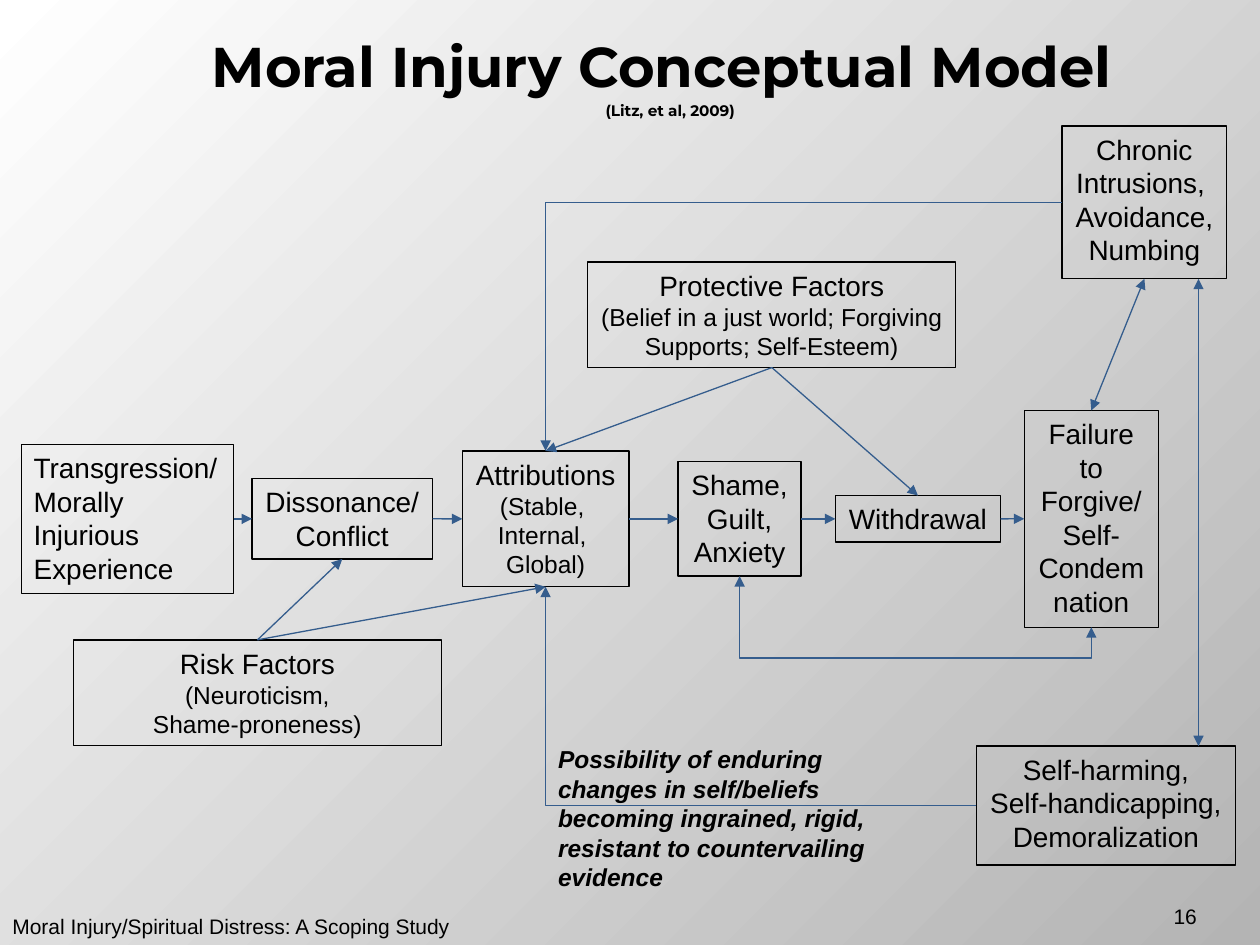
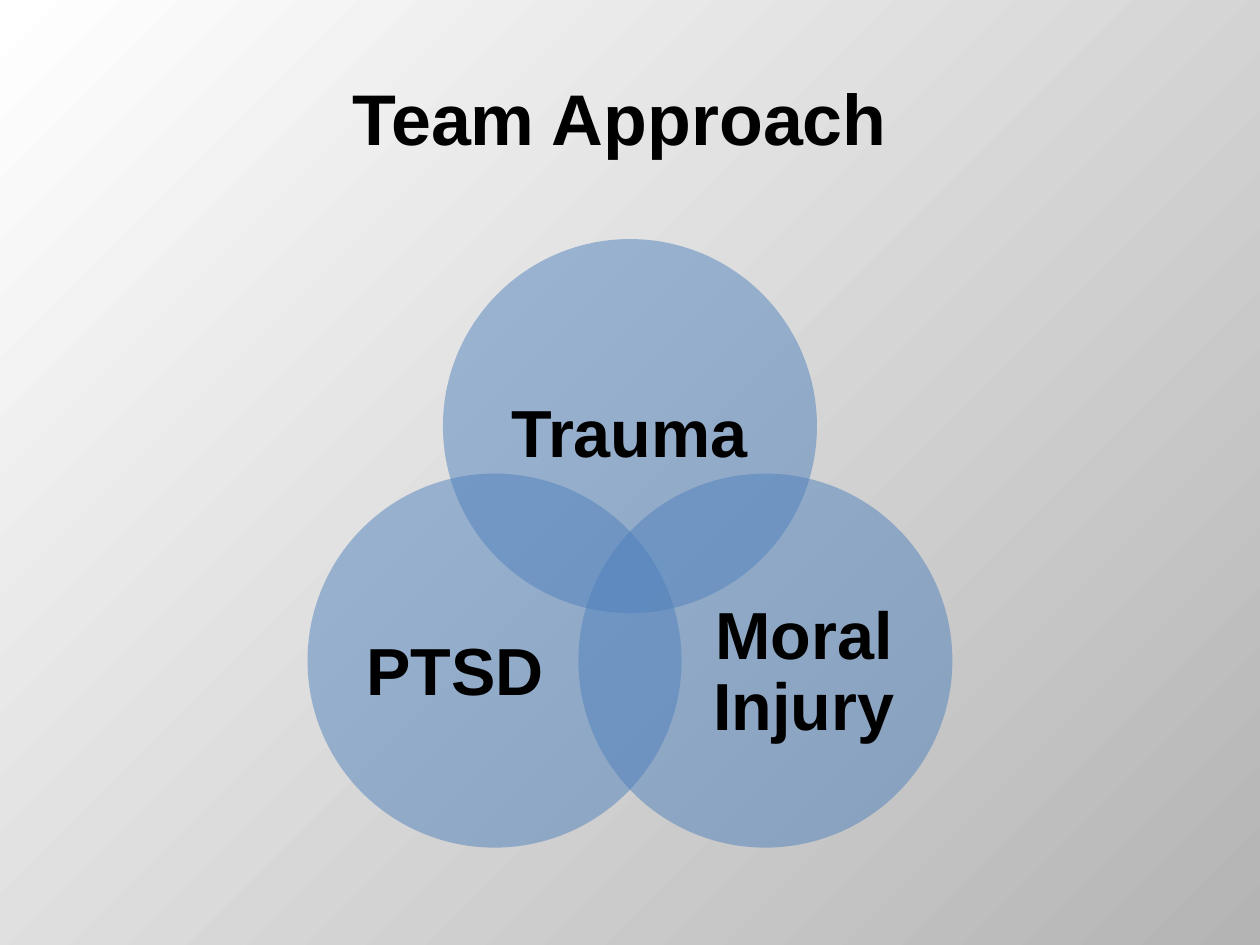
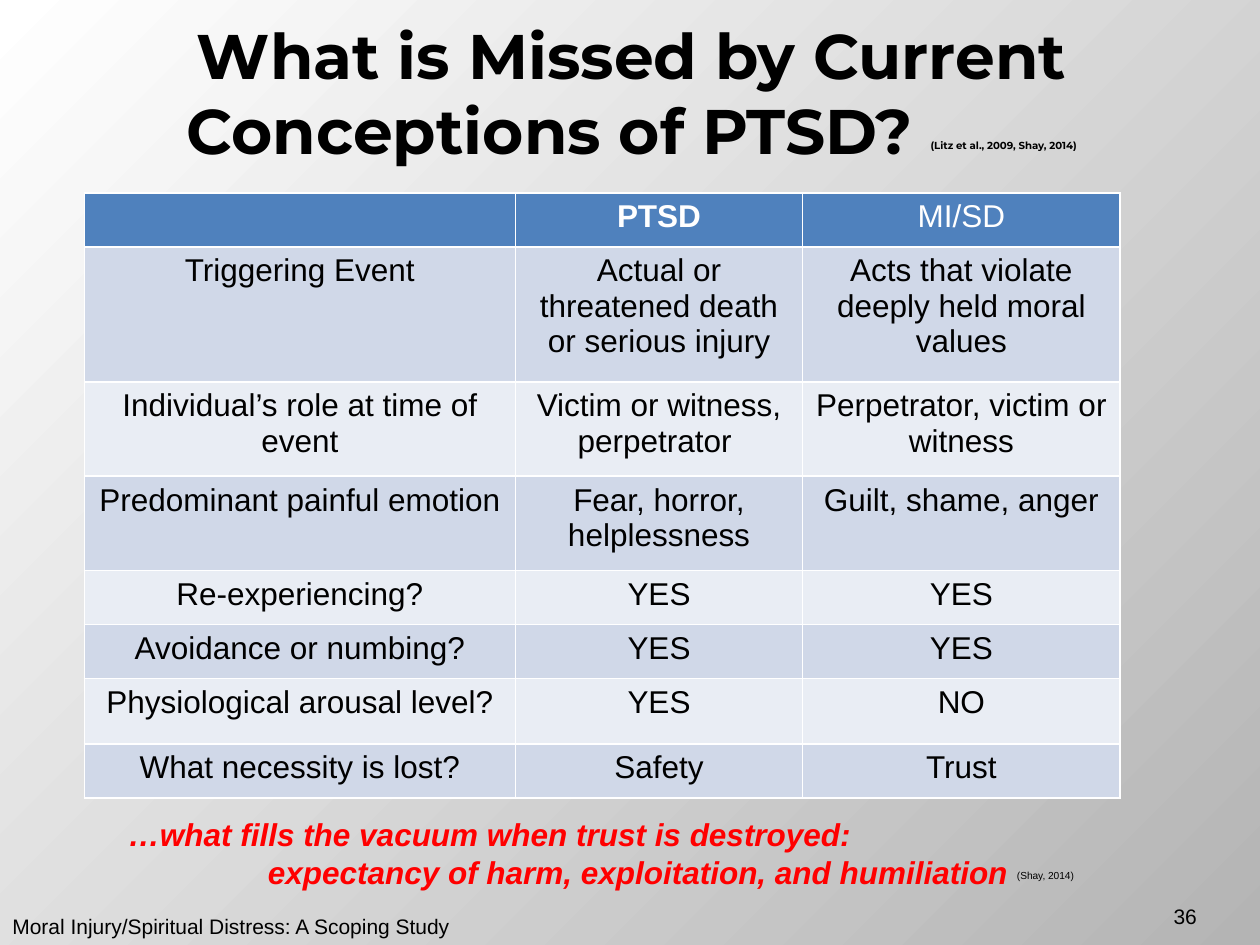
from copy import deepcopy
from math import cos, radians, sin

from lxml.etree import SubElement
from pptx import Presentation
from pptx.dml.color import RGBColor
from pptx.enum.shapes import MSO_CONNECTOR, MSO_SHAPE
from pptx.enum.text import MSO_ANCHOR, MSO_AUTO_SIZE, PP_ALIGN
from pptx.oxml import parse_xml
from pptx.oxml.ns import nsdecls, qn
from pptx.util import Cm, Pt

BLACK = RGBColor(0x00, 0x00, 0x00)
WHITE = RGBColor(0xFF, 0xFF, 0xFF)
RED = RGBColor(0xFF, 0x00, 0x00)
BLUE = RGBColor(0x4F, 0x81, 0xBD)
ARROW = RGBColor(0x35, 0x5D, 0x8D)
BAND_DARK = RGBColor(0xD0, 0xD8, 0xE8)
BAND_LIGHT = RGBColor(0xE9, 0xED, 0xF4)
BACKDROP_END = RGBColor(0xB4, 0xB4, 0xB4)

BODY = {"name": "Arial", "size": Pt(16), "color": BLACK}
HEADING = {"name": "Montserrat", "color": BLACK, "bold": True}
DETAIL = {"size": Pt(14)}
TOP, LEFT, BOTTOM, RIGHT = range(4)

FOOTER = "Moral Injury/Spiritual Distress: A Scoping Study"

ROW_NODES = {
    "event": (0, 4.28, 3, ["Transgression/Morally Injurious Experience"]),
    "conflict": (4.65, 3.64, 1.62, ["Dissonance/\nConflict"]),
    "attributions": (8.89, 3.36, 2.74, [
        "Attributions", [("(Stable, ", DETAIL)], [("Internal, ", DETAIL)], [("Global)", DETAIL)]]),
    "shame": (13.24, 2.48, 2.31, ["Shame,", "Guilt,", "Anxiety"]),
    "withdrawal": (16.41, 3.33, 0.94, ["Withdrawal"]),
    "failure": (20.22, 2.7, 4.37, ["Failure to Forgive/", "Self-Condemnation"]),
}
OUTER_NODES = {
    "protective": (11.42, 2.74, 7.42, 2.13, [
        "Protective Factors",
        [("(Belief in a just world; Forgiving Supports; Self-Esteem)", DETAIL)]]),
    "chronic": (20.98, 0, 3.32, 3.08, ["Chronic", "Intrusions, ", "Avoidance,", "Numbing"]),
    "harm": (19.25, 12.5, 5.23, 2.4, ["Self-harming,", "Self-handicapping,", "Demoralization"]),
    "risk": (1.05, 10.36, 7.42, 2.13, [
        "Risk Factors", [("(Neuroticism,", DETAIL)], [("Shame-proneness)", DETAIL)]]),
}
WRAPPED = {"event", "failure", "protective", "risk"}
FACTOR_LINKS = [
    ("risk", TOP, "conflict", BOTTOM),
    ("risk", TOP, "attributions", BOTTOM),
    ("protective", BOTTOM, "attributions", TOP),
    ("protective", BOTTOM, "withdrawal", TOP),
]
FEEDBACK_LINKS = [
    ("harm", LEFT, "attributions", BOTTOM),
    ("chronic", LEFT, "attributions", TOP),
]

CIRCLES = [
    ("Trauma", -90, (0.99, 1.3, 5.54, 3.4), MSO_ANCHOR.BOTTOM),
    ("Moral Injury", 30, (2.29, 1.96, 4.52, 4.14), MSO_ANCHOR.MIDDLE),
    ("PTSD", 150, (0.71, 1.96, 4.52, 4.14), MSO_ANCHOR.MIDDLE),
]

COMPARISON = [
    ("", "PTSD", "MI/SD"),
    ("Triggering Event", "Actual or threatened death or serious injury",
     "Acts that violate deeply held moral values"),
    ("Individual’s role at time of event", "Victim or witness, perpetrator ",
     "Perpetrator, victim or witness"),
    ("Predominant painful emotion ", "Fear, horror, helplessness", "Guilt, shame, anger"),
    ("Re-experiencing?", "YES", "YES"),
    ("Avoidance or numbing?", "YES", "YES"),
    ("Physiological arousal level?", "YES", "NO"),
    ("What necessity is lost?", "Safety", "Trust"),
]
COLUMN_WIDTHS = (8.69, 5.79, 6.4)
ROW_HEIGHTS = (1.09, 2.72, 1.9, 1.9, 1.09, 1.09, 1.32, 1.09)


def format_run(r, fmt):
    """Apply a dict of format values to a run."""
    for key, value in fmt.items():
        if key == "color":
            r.font.color.rgb = value
        elif key == "baseline":
            r._r.get_or_add_rPr().set("baseline", str(value))
        else:
            setattr(r.font, key, value)


def write(tf, paragraphs, fmt, align=PP_ALIGN.LEFT, spacing=None):
    """Fill a text frame with paragraphs given as strings or as lists of runs."""
    for i, runs in enumerate(paragraphs):
        p = tf.add_paragraph() if i else tf.paragraphs[0]
        p.alignment = align
        p.line_spacing = spacing
        for text, extra in [(runs, {})] if isinstance(runs, str) else runs:
            for j, part in enumerate(text.split("\n")):
                if j:
                    p.add_line_break()
                    p._p[-1].insert(0, deepcopy(r._r.rPr))
                if part:
                    r = p.add_run()
                    r.text = part
                    format_run(r, {**fmt, **extra})


def set_frame(tf, anchor=MSO_ANCHOR.TOP, wrap=True, **margins):
    """Set how a text frame wraps, anchors and pads its text."""
    settings = {"word_wrap": wrap, "auto_size": MSO_AUTO_SIZE.NONE, "vertical_anchor": anchor}
    for key, value in {**settings, **margins}.items():
        setattr(tf, key, value)
    return tf


def add_text(shapes, box, paragraphs, fmt, align=PP_ALIGN.LEFT, spacing=None, **frame):
    """Add a text box."""
    sp = shapes.add_textbox(*map(Cm, box))
    write(set_frame(sp.text_frame, **frame), paragraphs, fmt, align, spacing)
    return sp


def add_title(s, box, runs, fmt, anchor=MSO_ANCHOR.MIDDLE):
    """Move and fill the title placeholder."""
    sp = s.shapes.title
    sp.left, sp.top, sp.width, sp.height = map(Cm, box)
    write(set_frame(sp.text_frame, anchor), [runs], fmt, PP_ALIGN.CENTER)


def add_footer(s, number):
    """Add the study name and the page number."""
    fmt = {**BODY, "size": Pt(12)}
    add_text(s.shapes, (0, 18.03, 9.96, 1.02), [FOOTER], fmt, anchor=MSO_ANCHOR.BOTTOM)
    add_text(s.shapes, (22.02, 17.83, 2.11, 1.02), [str(number)], fmt, PP_ALIGN.RIGHT,
             anchor=MSO_ANCHOR.BOTTOM, margin_left=0, margin_right=0)


def add_node(s, box, paragraphs, wrap, align):
    """Add an outlined box of the diagram."""
    sp = s.shapes.add_shape(MSO_SHAPE.RECTANGLE, *map(Cm, box))
    sp.shadow.inherit = False
    sp.fill.background()
    sp.line.color.rgb = BLACK
    sp.line.width = Pt(0.75)
    write(set_frame(sp.text_frame, wrap=wrap), paragraphs, BODY, align)
    return sp


def add_arrow(s, kind=MSO_CONNECTOR.STRAIGHT, ends=(0, 0, 0, 0), both=False):
    """Add a connector with one or two arrowheads."""
    c = s.shapes.add_connector(kind, *ends)
    c.line.color.rgb = ARROW
    c.line.width = Pt(0.75)
    spPr = c._element.spPr
    for tag in ("a:headEnd", "a:tailEnd") if both else ("a:tailEnd",):
        SubElement(spPr.find(qn("a:ln")), qn(tag)).set("type", "triangle")
    SubElement(spPr, qn("a:effectLst"))
    return c


def link(s, start, start_side, end, end_side, **options):
    """Join the sides of two boxes with an arrow."""
    c = add_arrow(s, **options)
    c.begin_connect(start, start_side)
    c.end_connect(end, end_side)
    return c


def link_below(s, start, end, depth):
    """Join the bottoms of two boxes with an arrow that dips below both."""
    c = link(s, start, BOTTOM, end, BOTTOM, kind=MSO_CONNECTOR.ELBOW, both=True)
    dx, dy = c.width, c.height
    c.left, c.top = c.left + (dx - dy) // 2, c.top + (dy - dx) // 2
    c.width, c.height = dy, dx
    spPr = c._element.spPr
    for key, value in {"rot": "16200000", "flipH": "1"}.items():
        spPr.find(qn("a:xfrm")).set(key, value)
    geom = spPr.find(qn("a:prstGeom"))
    guides = geom.find(qn("a:avLst"))
    if guides is None:
        guides = SubElement(geom, qn("a:avLst"))
    guide = SubElement(guides, qn("a:gd"))
    guide.set("name", "adj1")
    guide.set("fmla", f"val {round(depth / dy * 100000)}")


def add_model(s, left, top):
    """Draw the conceptual model from its top-left corner."""
    axis = 7.92
    boxes = {name: (x, axis - h / 2, w, h, text) for name, (x, w, h, text) in ROW_NODES.items()}
    nodes = {}
    for name, (x, y, w, h, text) in {**boxes, **OUTER_NODES}.items():
        align = PP_ALIGN.LEFT if name == "event" else PP_ALIGN.CENTER
        nodes[name] = add_node(s, (left + x, top + y, w, h), text, name in WRAPPED, align)
    row = list(ROW_NODES)
    steps = [(a, RIGHT, b, LEFT) for a, b in zip(row, row[1:])]
    for a, a_side, b, b_side in steps + FACTOR_LINKS:
        link(s, nodes[a], a_side, nodes[b], b_side)
    for a, a_side, b, b_side in FEEDBACK_LINKS:
        c = link(s, nodes[a], a_side, nodes[b], b_side, kind=MSO_CONNECTOR.ELBOW)
        c._element.spPr.find(qn("a:prstGeom")).set("prst", "bentConnector2")
    chronic, harm = nodes["chronic"], nodes["harm"]
    link(s, chronic, BOTTOM, nodes["failure"], TOP, both=True)
    link_below(s, nodes["shame"], nodes["failure"], Cm(1.65))
    x = Cm(left + 23.73)
    add_arrow(s, ends=(x, chronic.top + chronic.height, x, harm.top), both=True)
    note = ("Possibility of enduring changes in self/beliefs becoming ingrained, rigid, "
            "resistant to countervailing evidence")
    add_text(s.shapes, (left + 10.57, top + 12.34, 7.62, 3.25), [note],
             {**BODY, **DETAIL, "bold": True, "italic": True})


def add_venn(s, left, top, width, diameter):
    """Draw three overlapping circles around a common centre."""
    shapes = s.shapes.add_group_shape().shapes
    reach = (width - diameter) / 2 / cos(radians(30))
    for label, angle, (dx, dy, w, h), anchor in CIRCLES:
        x = left + (width - diameter) / 2 + reach * cos(radians(angle))
        y = top + reach + reach * sin(radians(angle))
        sp = shapes.add_shape(MSO_SHAPE.OVAL, *map(Cm, (x, y, diameter, diameter)))
        sp.shadow.inherit = False
        sp.fill.solid()
        sp.fill.fore_color.rgb = BLUE
        color = sp._element.spPr.find(qn("a:solidFill")).find(qn("a:srgbClr"))
        SubElement(color, qn("a:alpha")).set("val", "50000")
        sp.line.fill.background()
        add_text(shapes, (x + dx, y + dy, w, h), [label], {**BODY, "size": Pt(38), "bold": True},
                 PP_ALIGN.CENTER, 0.9, anchor=anchor, margin_left=0, margin_top=0,
                 margin_right=0, margin_bottom=0)


def add_borders(cell):
    """Give a cell thin white borders."""
    tcPr = cell._tc.get_or_add_tcPr()
    for i, side in enumerate("LRTB"):
        tcPr.insert(i, parse_xml(
            f'<a:ln{side} {nsdecls("a")} w="12700"><a:solidFill>'
            f'<a:srgbClr val="{WHITE}"/></a:solidFill></a:ln{side}>'))


def add_comparison(s, left, top):
    """Add the comparison table."""
    size = (sum(COLUMN_WIDTHS), sum(ROW_HEIGHTS))
    table = s.shapes.add_table(len(COMPARISON), len(COLUMN_WIDTHS),
                               *map(Cm, (left, top, *size))).table
    for column, width in zip(table.columns, COLUMN_WIDTHS):
        column.width = Cm(width)
    for i, (texts, height) in enumerate(zip(COMPARISON, ROW_HEIGHTS)):
        table.rows[i].height = Cm(height)
        fill = (BAND_DARK if i % 2 else BAND_LIGHT) if i else BLUE
        for j, text in enumerate(texts):
            cell = table.cell(i, j)
            cell.fill.solid()
            cell.fill.fore_color.rgb = fill
            add_borders(cell)
            fmt = {"size": Pt(18), "color": BLACK if i else WHITE, "bold": (i, j) == (0, 1)}
            write(cell.text_frame, [text], {**BODY, **fmt}, PP_ALIGN.CENTER)


def add_conclusion(s, box):
    """Add the red closing statement with its source."""
    cite = {"size": Pt(10), "color": BLACK, "bold": False, "italic": False, "baseline": 30000}
    sp = add_text(s.shapes, box, [
        "…what fills the vacuum when trust is destroyed:",
        [("expectancy of harm, exploitation, and humiliation ", {}), ("(Shay, 2014)", cite)],
    ], {**BODY, "size": Pt(18), "color": RED, "bold": True, "italic": True})
    sp.text_frame.paragraphs[1]._p.get_or_add_pPr().set("marL", str(Cm(2.81)))


def set_backdrop(master):
    """Give the master a gradient that spreads from the top-left corner."""
    cSld = master._element.cSld
    for bg in cSld.findall(qn("p:bg")):
        cSld.remove(bg)
    cSld.insert(0, parse_xml(
        f'<p:bg {nsdecls("p", "a")}><p:bgPr><a:gradFill rotWithShape="1"><a:gsLst>'
        f'<a:gs pos="0"><a:srgbClr val="{WHITE}"/></a:gs>'
        f'<a:gs pos="100000"><a:srgbClr val="{BACKDROP_END}"/></a:gs></a:gsLst>'
        '<a:path path="circle"><a:fillToRect r="100000" b="100000"/></a:path>'
        '</a:gradFill><a:effectLst/></p:bgPr></p:bg>'))


def main():
    """Build the three slides."""
    prs = Presentation()
    prs.slide_width, prs.slide_height = Cm(25.4), Cm(19.05)
    set_backdrop(prs.slide_master)
    model, team, missed = (prs.slides.add_slide(prs.slide_layouts[5]) for _ in range(3))

    add_title(model, (2.08, 0.03, 22.86, 3.18), [
        ("Moral Injury Conceptual Model \n", {}),
        ("(Litz, et al, 2009)", {"size": Pt(15), "baseline": 30000}),
    ], {**HEADING, "size": Pt(32)})
    add_model(model, 0.43, 2.54)
    add_footer(model, 16)

    add_title(team, (1.27, 0.76, 22.86, 3.18), "Team Approach ",
              {**HEADING, "name": "Arial", "size": Pt(41)})
    add_venn(team, 6.2, 4.82, 13, 7.54)

    add_title(missed, (0.03, 0.2, 25.4, 3.33), [
        ("What is Missed by Current Conceptions of PTSD? ", {}),
        ("(Litz et al., 2009, Shay, 2014)", {"size": Pt(10), "baseline": 30000}),
    ], {**HEADING, "size": Pt(36)}, MSO_ANCHOR.TOP)
    add_comparison(missed, 1.7, 3.89)
    add_conclusion(missed, (2.34, 16.31, 22.66, 1.8))
    add_footer(missed, 36)

    prs.save("out.pptx")


if __name__ == "__main__":
    main()
